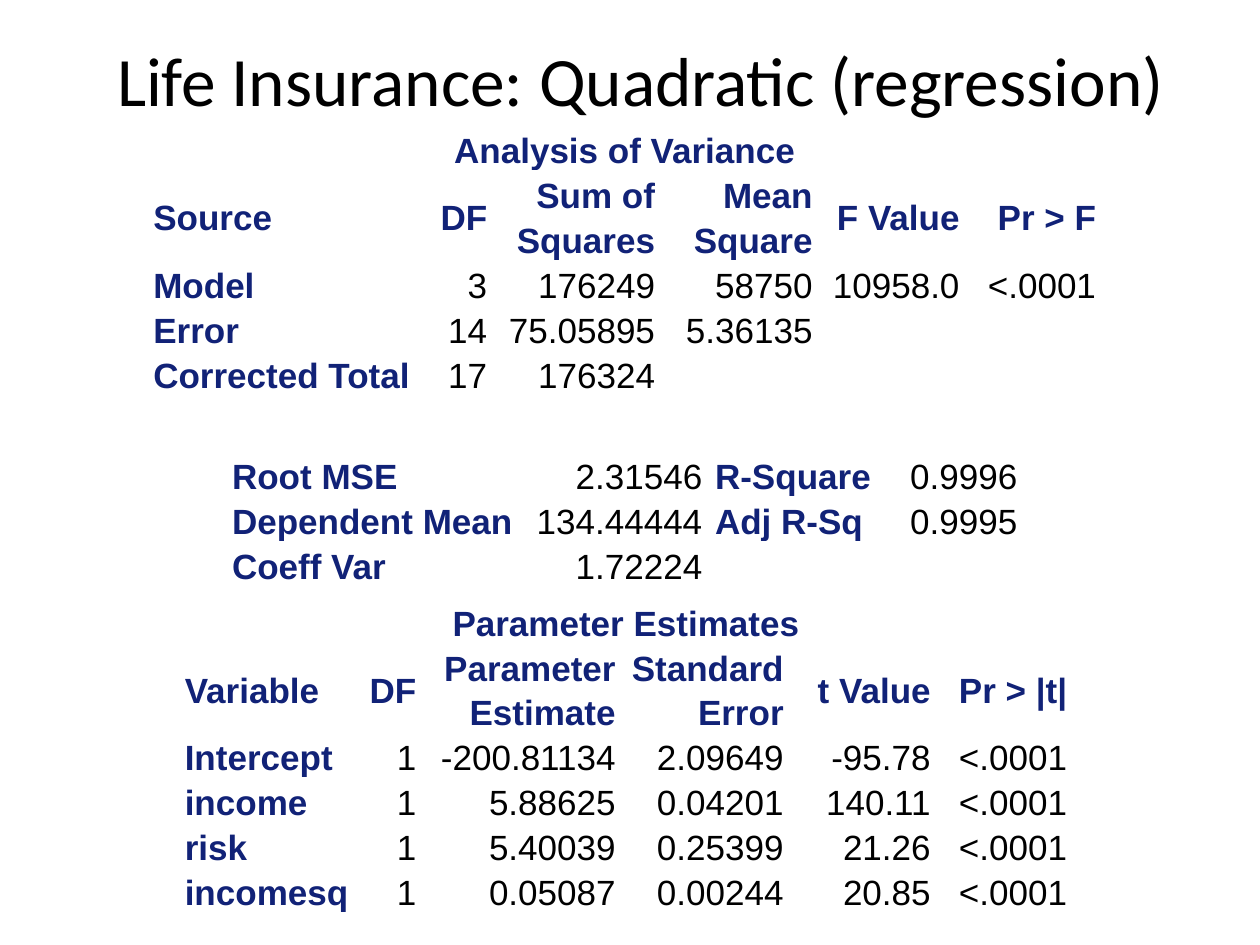
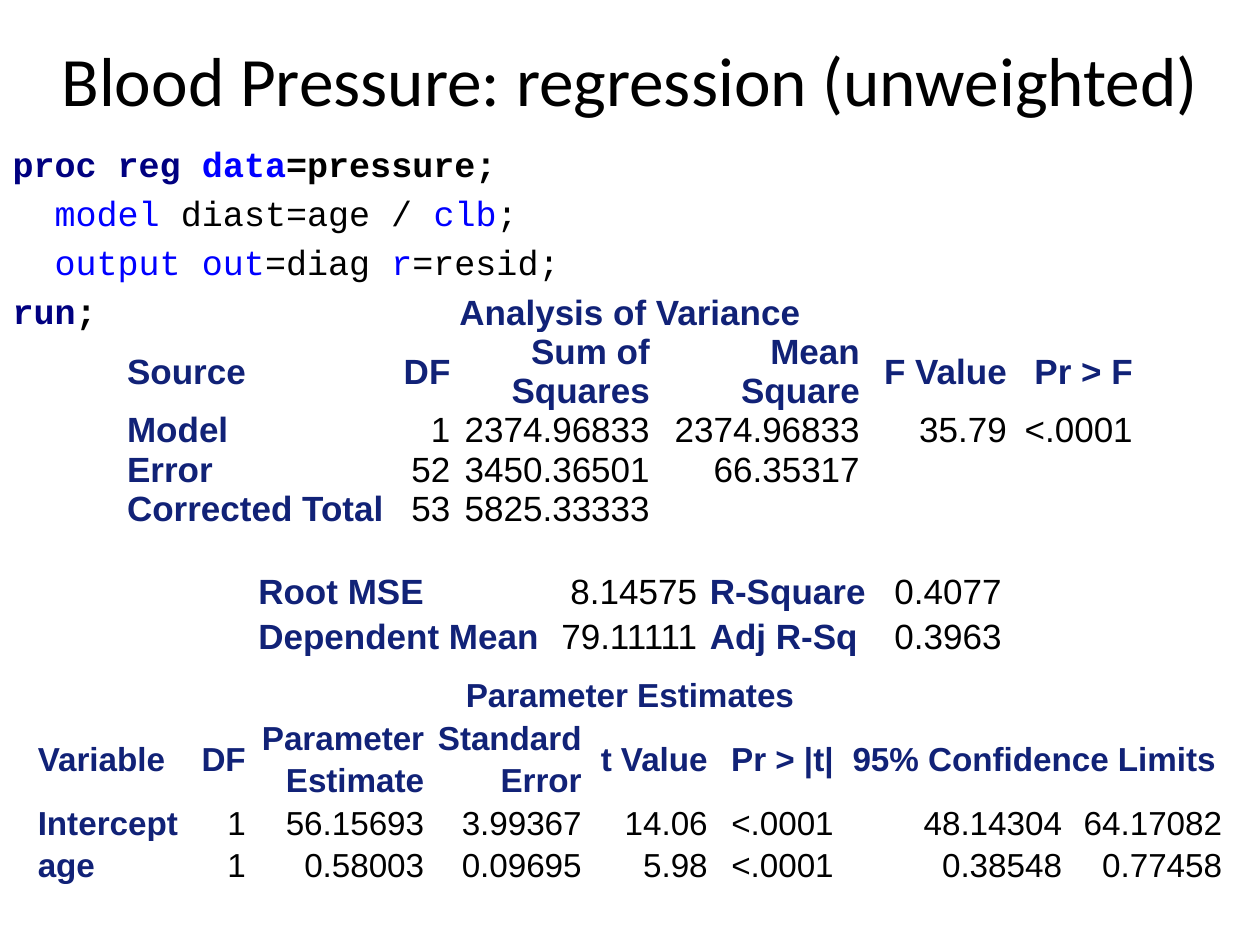
from itertools import takewhile

from pptx import Presentation
from pptx.dml.color import RGBColor
from pptx.enum.text import MSO_ANCHOR, MSO_AUTO_SIZE, PP_ALIGN
from pptx.oxml.ns import qn
from pptx.util import Inches, Pt

LEFT, CENTER, RIGHT = PP_ALIGN.LEFT, PP_ALIGN.CENTER, PP_ALIGN.RIGHT
MIDDLE = MSO_ANCHOR.MIDDLE
NO_FIT = MSO_AUTO_SIZE.NONE

BLACK = RGBColor(0x00, 0x00, 0x00)
LABEL_BLUE = RGBColor(0x11, 0x22, 0x77)
STEP_NAVY = RGBColor(0x00, 0x00, 0x80)
KEYWORD_BLUE = RGBColor(0x00, 0x00, 0xFF)

GRID_COLUMNS, GRID_ROWS = 120, 90
TITLE_ONLY, TITLE_AND_BODY = 5, 1

# Headings shared by the tables; None continues the cell to its left
VARIANCE = "Analysis of Variance"
VARIANCE_HEADINGS = ["Source", "DF", "Sum of\nSquares", "Mean\nSquare", "F Value", "Pr > F"]
ESTIMATES = "Parameter Estimates"
ESTIMATE_HEADINGS = ["Variable", "DF", "Parameter\nEstimate", "Standard\nError",
                     "t Value", "Pr > |t|"]


class Deck:
    """Holds the style, the grid and the current slide."""

    title_font, title_size = "Calibri", 39.6
    code_font, table_font, text_size = "Courier New", "Arial", 20

    def __init__(self):
        self.presentation = Presentation()
        self.presentation.slide_width = Inches(10)
        self.presentation.slide_height = Inches(7.5)
        self.slide = None

    def across(self, columns):
        return round(self.presentation.slide_width * columns / GRID_COLUMNS)

    def down(self, rows):
        return round(self.presentation.slide_height * rows / GRID_ROWS)

    def place(self, shape, left, top, width, height):
        shape.left, shape.top = self.across(left), self.down(top)
        shape.width, shape.height = self.across(width), self.down(height)

    def add_run(self, paragraph, text, font, size, color, bold=False):
        run = paragraph.add_run()
        run.text = text
        run.font.name, run.font.size = font, Pt(size)
        run.font.color.rgb, run.font.bold = color, bold

    def add_slide(self, layout, title, left, width):
        layouts = self.presentation.slide_layouts
        self.slide = self.presentation.slides.add_slide(layouts[layout])
        shape = self.slide.shapes.title
        self.place(shape, left, 0, width, 15)
        frame = shape.text_frame
        frame.auto_size, frame.vertical_anchor = NO_FIT, MIDDLE
        paragraph = frame.paragraphs[0]
        paragraph.alignment = CENTER
        self.add_run(paragraph, title, self.title_font, self.title_size, BLACK)

    def add_code(self, lines, left, top, width, height):
        body = self.slide.placeholders[1]
        self.place(body, left, top, width, height)
        frame = body.text_frame
        frame.auto_size = NO_FIT
        for index, line in enumerate(lines):
            paragraph = frame.add_paragraph() if index else frame.paragraphs[0]
            paragraph._p.get_or_add_pPr().insert_element_before(
                paragraph._p.makeelement(qn("a:buNone"), {}), "a:tabLst", "a:defRPr")
            for text, color, bold in line:
                self.add_run(paragraph, text, self.code_font, self.text_size, color, bold)

    def fill_cell(self, cell, text, alignment, is_label, size, spaced):
        paragraph = cell.text_frame.paragraphs[0]
        paragraph.alignment = alignment
        if spaced:
            paragraph.line_spacing = 1.15
            paragraph.space_before = paragraph.space_after = Pt(5)
        color = LABEL_BLUE if is_label else BLACK
        for index, part in enumerate(text.split("\n")):
            if index:
                paragraph.add_line_break()
            self.add_run(paragraph, part, self.table_font, size, color, is_label)

    def add_table(self, left, top, height, widths, rows, caption=None, headings=None,
                  label_columns=(0,), size=text_size, spaced=True):
        """Draw an output table: labels bold on the left, figures on the right."""
        heads = [headings] if headings else []
        if caption:
            heads.insert(0, [caption] + [None] * (len(widths) - 1))
        content = heads + rows
        shape = self.slide.shapes.add_table(
            len(content), len(widths), self.across(left), self.down(top),
            self.across(sum(widths)), self.down(height))
        table = shape.table
        table.first_row = table.horz_banding = False
        for column, width in zip(table.columns, widths):
            column.width = self.across(width)
        for row in table.rows:
            row.height = 0  # rows grow to fit their text
        shape.height = self.down(height)

        for r, texts in enumerate(content):
            for c in range(len(widths)):
                cell = table.cell(r, c)
                cell.fill.background()
                cell.vertical_anchor = MIDDLE
                cell.margin_left = cell.margin_right = Inches(0.05)
                cell.margin_top = cell.margin_bottom = 0
                text = texts[c] if c < len(texts) else None
                if not text:
                    continue
                span = 0
                if r < len(heads):
                    span = len(list(takewhile(lambda item: item is None, texts[c + 1:])))
                if span:
                    cell.merge(table.cell(r, c + span))
                in_label_column = c in label_columns
                alignment = CENTER if span else LEFT if in_label_column else RIGHT
                is_label = r < len(heads) or in_label_column
                self.fill_cell(cell, text, alignment, is_label, size, spaced)


def add_life_insurance(deck):
    deck.add_slide(TITLE_ONLY, "Life Insurance: Quadratic (regression)", 7, 108)

    # Analysis of variance
    deck.add_table(14, 12, 27.6, [27, 6, 16, 15, 14, 13], [
        ["Model", "3", "176249", "58750", "10958.0", "<.0001"],
        ["Error", "14", "75.05895", "5.36135"],
        ["Corrected Total", "17", "176324"],
    ], VARIANCE, VARIANCE_HEADINGS)

    # Fit statistics
    deck.add_table(21.5, 43, 13.8, [28, 18, 17, 13], [
        ["Root MSE", "2.31546", "R-Square", "0.9996"],
        ["Dependent Mean", "134.44444", "Adj R-Sq", "0.9995"],
        ["Coeff Var", "1.72224"],
    ], label_columns=(0, 2))

    # Parameter estimates
    deck.add_table(17, 57, 32.2, [17.25, 6, 19, 16, 14, 13], [
        ["Intercept", "1", "-200.81134", "2.09649", "-95.78", "<.0001"],
        ["income", "1", "5.88625", "0.04201", "140.11", "<.0001"],
        ["risk", "1", "5.40039", "0.25399", "21.26", "<.0001"],
        ["incomesq", "1", "0.05087", "0.00244", "20.85", "<.0001"],
    ], ESTIMATES, ESTIMATE_HEADINGS)


def add_blood_pressure(deck):
    deck.add_slide(TITLE_AND_BODY, "Blood Pressure: regression (unweighted)", 0, 120)

    # Program code
    deck.add_code([
        [("proc reg ", STEP_NAVY, True), ("data", KEYWORD_BLUE, True),
         ("=pressure;", BLACK, True)],
        [("  model ", KEYWORD_BLUE, False), ("diast=age / ", BLACK, False),
         ("clb", KEYWORD_BLUE, False), (";", BLACK, False)],
        [("  output out", KEYWORD_BLUE, False), ("=diag ", BLACK, False),
         ("r", KEYWORD_BLUE, False), ("=resid;", BLACK, False)],
        [("run", STEP_NAVY, True), (";", BLACK, True)],
    ], 0, 13, 120, 19)

    # Analysis of variance
    deck.add_table(11.5, 28, 24, [26, 6, 19, 20, 14, 12], [
        ["Model", "1", "2374.96833", "2374.96833", "35.79", "<.0001"],
        ["Error", "52", "3450.36501", "66.35317"],
        ["Corrected Total", "53", "5825.33333"],
    ], VARIANCE, VARIANCE_HEADINGS, spaced=False)

    # Fit statistics
    deck.add_table(24, 54, 9.2, [28, 15, 17, 12], [
        ["Root MSE", "8.14575", "R-Square", "0.4077"],
        ["Dependent Mean", "79.11111", "Adj R-Sq", "0.3963"],
    ], label_columns=(0, 2))

    # Parameter estimates with confidence limits
    deck.add_table(3, 64, 21.8, [15, 6, 17, 15, 12, 12, 21.75, 15.25], [
        ["Intercept", "1", "56.15693", "3.99367", "14.06", "<.0001", "48.14304", "64.17082"],
        ["age", "1", "0.58003", "0.09695", "5.98", "<.0001", "0.38548", "0.77458"],
    ], ESTIMATES, ESTIMATE_HEADINGS + ["95% Confidence Limits", None], size=19)


def main():
    deck = Deck()
    add_life_insurance(deck)
    add_blood_pressure(deck)
    deck.presentation.save("out.pptx")


if __name__ == "__main__":
    main()
